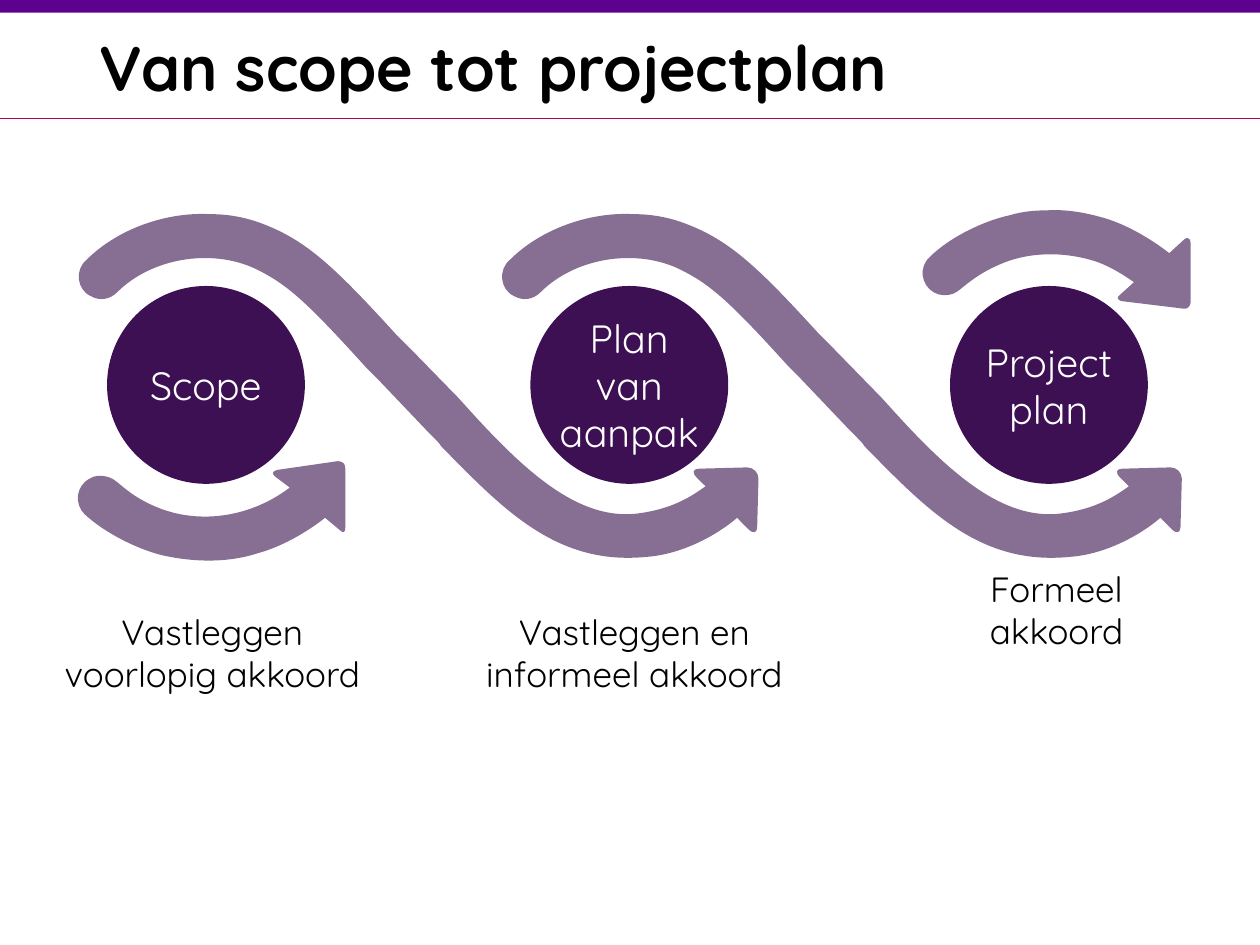
from lxml import etree
from pptx import Presentation
from pptx.dml.color import RGBColor
from pptx.enum import shapes, text
from pptx.oxml.ns import qn
from pptx.util import Pt

PX = 9144
WIDTH, HEIGHT = 1000, 750
FONT = "Quicksand"
BLACK = RGBColor(0x00, 0x00, 0x00)
WHITE = RGBColor(0xFF, 0xFF, 0xFF)
VIOLET = RGBColor(0x5D, 0x01, 0x8F)
MAGENTA = RGBColor(0xB0, 0x00, 0x63)
MAUVE = RGBColor(0x87, 0x6F, 0x93)
AUBERGINE = RGBColor(0x3C, 0x10, 0x53)

TITLE = "Van scope tot projectplan"
STEPS = [
    (85, ["Scope"]),
    (421, ["Plan", "van", "aanpak"]),
    (754, ["Project", "plan"]),
]
CAPTIONS = [
    (48, 111, ["Vastleggen voorlopig akkoord"]),
    (383, 111, ["Vastleggen en informeel akkoord"]),
    (718, 77, ["Formeel", "akkoord"]),
]
CIRCLE_TOP, CIRCLE_SIZE = 227, 157
CAPTION_TOP, CAPTION_WIDTH = 445, 241
WAVE_PITCH = 336

# Two numbers are a line to a point, six are a Bézier curve.
WAVE = [
    (167, 170), (180, 170, 192, 172, 204, 176), (241, 189, 263, 209, 314, 265),
    (315, 266, 319, 270, 325, 276), (364, 316), (374, 327),
    (422, 380, 464, 415, 510, 407), (536, 403, 550, 393, 560, 386), (553, 379),
    (549, 375, 550, 372, 555, 372), (593, 371), (598, 371, 602, 375, 602, 380),
    (601, 418), (601, 423, 598, 424, 594, 420), (585, 411),
    (570, 424, 542, 440, 513, 442), (442, 449, 400, 405, 350, 354),
    (350, 353, 345, 348, 338, 341), (299, 300), (290, 291),
    (242, 238, 227, 225, 202, 213), (167, 197, 120, 205, 93, 232),
    (87, 238, 79, 239, 72, 235), (61, 230, 59, 214, 69, 206),
    (92, 183, 130, 168, 167, 170),
]
ARC_OUT = [
    (831, 167), (847, 166, 862, 169, 876, 173), (897, 179, 918, 193, 928, 201),
    (940, 190), (942, 188, 945, 189, 945, 193), (945, 240),
    (945, 243, 942, 246, 939, 245), (890, 239), (887, 238, 886, 236, 889, 234),
    (900, 224), (893, 219, 882, 212, 871, 208), (847, 200, 822, 200, 801, 207),
    (773, 217, 764, 230, 757, 233), (752, 235, 746, 235, 741, 232),
    (731, 226, 729, 212, 738, 204), (754, 188, 782, 175, 801, 171),
    (811, 168, 821, 167, 831, 167),
]
ARC_IN = [
    (268, 366), (220, 373), (216, 374, 216, 376, 218, 378), (230, 387),
    (222, 393, 212, 399, 201, 403), (177, 412, 152, 412, 131, 405),
    (102, 395, 94, 381, 87, 379), (81, 377, 75, 377, 71, 380),
    (60, 386, 59, 400, 67, 408), (84, 424, 112, 437, 130, 441),
    (158, 447, 184, 446, 205, 439), (227, 433, 248, 419, 258, 411), (270, 421),
    (272, 423, 274, 423, 274, 419), (274, 372), (274, 368, 272, 366, 268, 366),
]


def paint(shape, color):
    shape.shadow.inherit = False
    shape.fill.solid()
    shape.fill.fore_color.rgb = color
    shape.line.fill.background()


def add_preset(slide, kind, left, top, width, height, color):
    shape = slide.shapes.add_shape(kind, *[n * PX for n in (left, top, width, height)])
    paint(shape, color)
    return shape


def add_box(slide, left, top, width, height):
    return slide.shapes.add_textbox(*[n * PX for n in (left, top, width, height)])


def write(shape, lines, font, align, frame_format):
    frame = shape.text_frame
    for name, value in frame_format.items():
        setattr(frame, name, value)
    for index, line in enumerate(lines):
        paragraph = frame.paragraphs[0] if index == 0 else frame.add_paragraph()
        paragraph.alignment = align
        run = paragraph.add_run()
        run.text = line
        run.font.color.rgb = font["color"]
        for name in ("name", "size", "bold"):
            setattr(run.font, name, font.get(name))


def add_curve(slide, outline, shift=0):
    points = [
        ((segment[i] + shift) * PX, segment[i + 1] * PX)
        for segment in outline
        for i in range(0, len(segment), 2)
    ]
    builder = slide.shapes.build_freeform(*points[0])
    builder.add_line_segments(points[1:], close=True)
    shape = builder.convert_to_shape()
    path_element = next(shape.element.iter(qn("a:path")))
    vertices = iter(path_element.findall(qn("a:lnTo")))
    for segment in outline[1:]:
        vertex = next(vertices)
        if len(segment) == 6:
            curve = etree.Element(qn("a:cubicBezTo"))
            vertex.addprevious(curve)
            for corner in (vertex, next(vertices), next(vertices)):
                curve.append(corner[0])
                path_element.remove(corner)
    paint(shape, MAUVE)


def main():
    presentation = Presentation()
    presentation.slide_width, presentation.slide_height = WIDTH * PX, HEIGHT * PX
    slide = presentation.slides.add_slide(presentation.slide_layouts[6])
    preset = shapes.MSO_SHAPE
    center, left_align = text.PP_ALIGN.CENTER, text.PP_ALIGN.LEFT

    add_preset(slide, preset.RECTANGLE, 0, 0, WIDTH, 10, VIOLET)
    rule = slide.shapes.add_connector(
        shapes.MSO_CONNECTOR.STRAIGHT, 0, 94 * PX, WIDTH * PX, 94 * PX)
    rule.line.color.rgb = MAGENTA
    rule.line.width = Pt(0.75)
    etree.SubElement(rule.element.spPr, qn("a:effectLst"))

    add_curve(slide, ARC_OUT)

    title = add_box(slide, 69, 12, 931, 81)
    paint(title, WHITE)
    write(title, [TITLE], dict(name=FONT, size=Pt(36), bold=True, color=BLACK),
          left_align, dict(word_wrap=True, vertical_anchor=text.MSO_ANCHOR.MIDDLE))

    add_curve(slide, WAVE, WAVE_PITCH)

    no_margins = dict(margin_left=0, margin_right=0, margin_top=0, margin_bottom=0)
    for left, lines in STEPS:
        circle = add_preset(slide, preset.OVAL, left, CIRCLE_TOP,
                            CIRCLE_SIZE, CIRCLE_SIZE, AUBERGINE)
        write(circle, lines, dict(name=FONT, size=Pt(22.5), color=WHITE), center,
              dict(no_margins, word_wrap=False, vertical_anchor=text.MSO_ANCHOR.MIDDLE))

    add_curve(slide, ARC_IN)
    add_curve(slide, WAVE)

    for left, height, lines in CAPTIONS:
        caption = add_box(slide, left, CAPTION_TOP, CAPTION_WIDTH, height)
        write(caption, lines, dict(name=FONT, size=Pt(20), color=BLACK), center,
              dict(margin_left=0, margin_right=0, word_wrap=True,
                   vertical_anchor=text.MSO_ANCHOR.BOTTOM))

    presentation.save("out.pptx")


if __name__ == "__main__":
    main()
